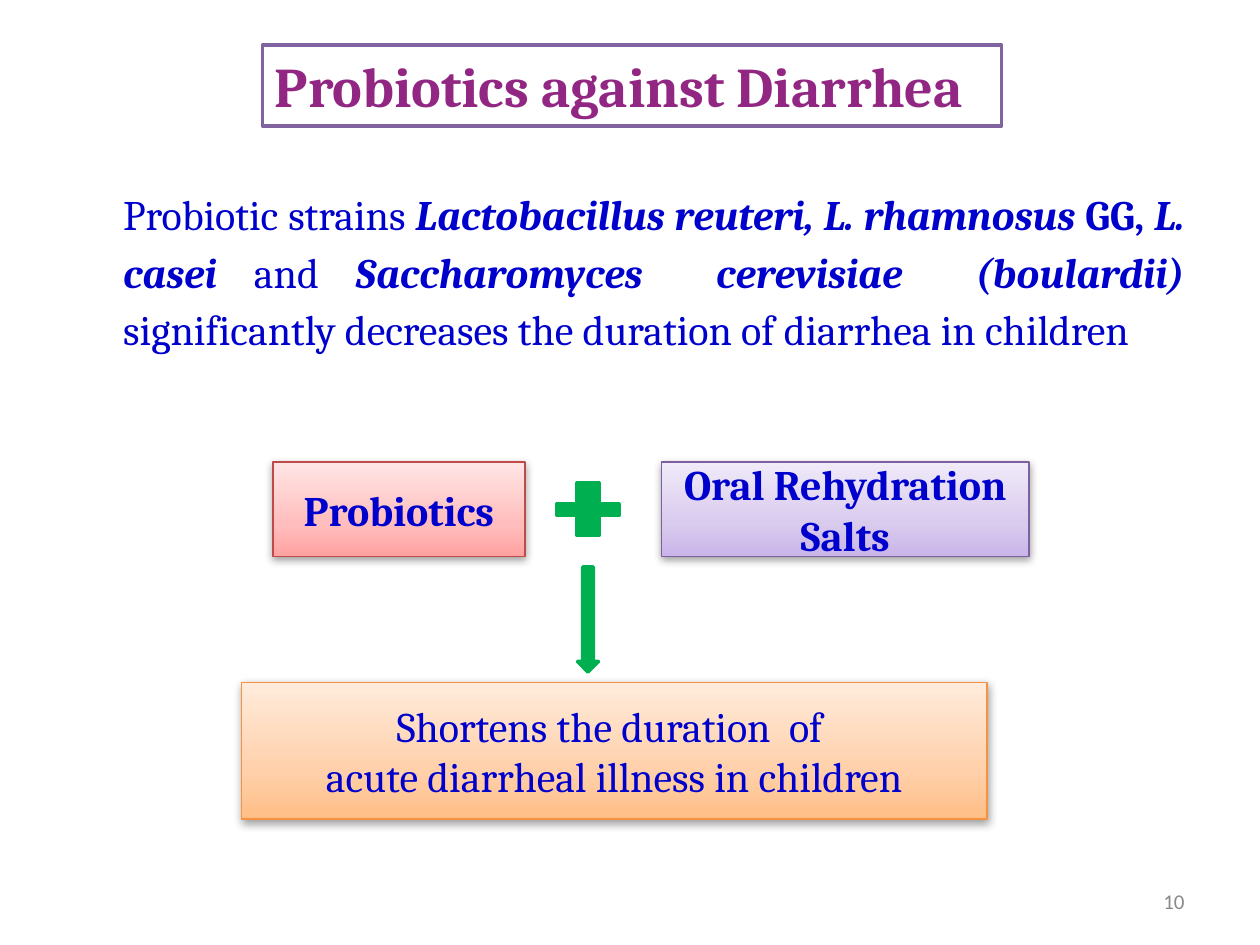
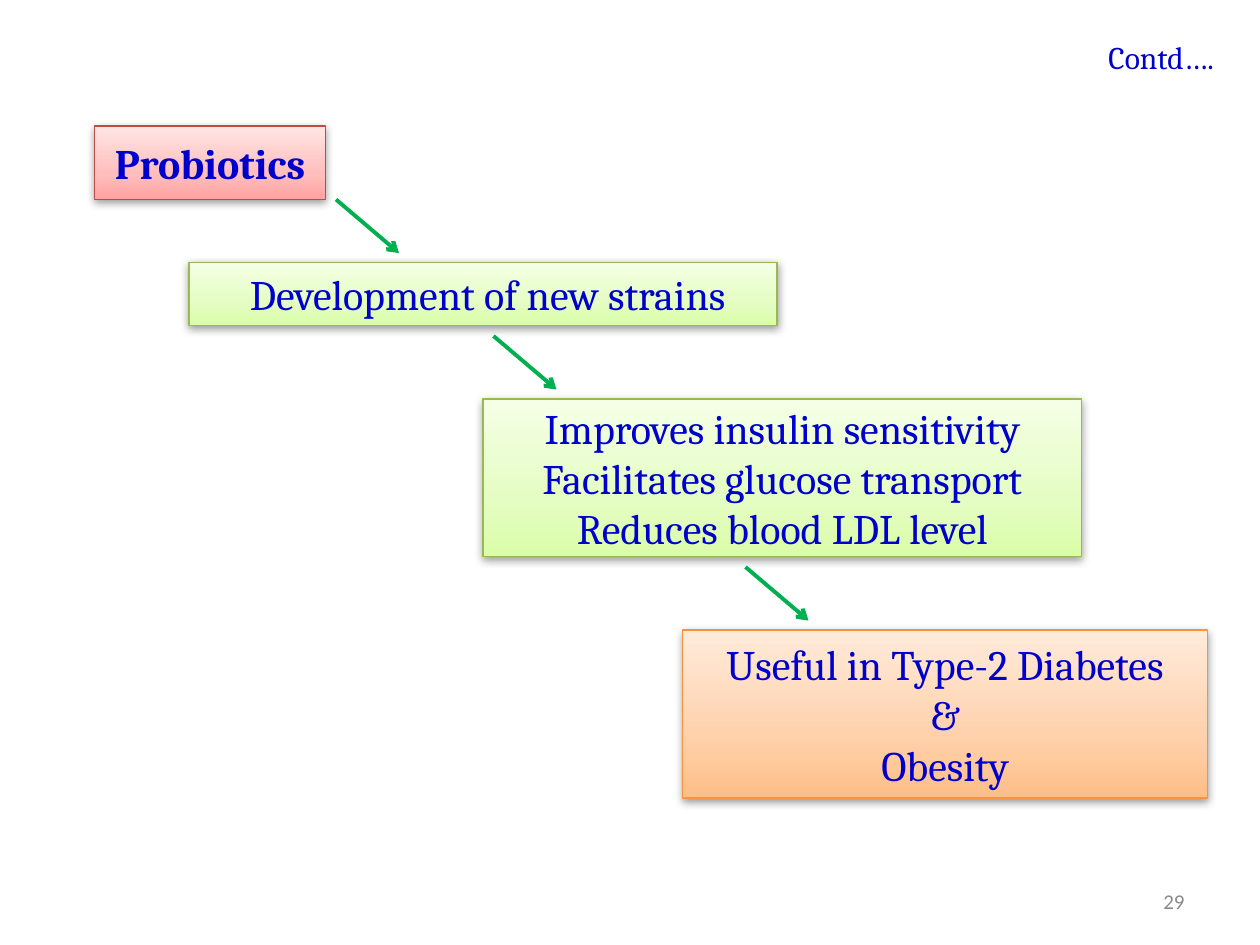
from lxml.etree import SubElement
from pptx import Presentation
from pptx.dml.color import RGBColor
from pptx.enum.shapes import MSO_CONNECTOR as CONN, MSO_SHAPE as SHAPE
from pptx.enum.text import MSO_ANCHOR as ANCHOR, PP_ALIGN as ALIGN
from pptx.oxml.ns import qn
from pptx.util import Inches, Pt

COLS, ROWS = 120, 90
WIDTH, HEIGHT = Inches(10), Inches(7.5)
GREEN, WHITE = "00B050", "FFFFFF"
BODY = {"name": "Cambria", "size": Pt(24), "color": "0000CC"}
BOLD = {**BODY, "bold": True}
STRAIN = {**BOLD, "italic": True}
TITLE = {**BOLD, "size": Pt(32), "color": "922683"}
NOTE = {**BODY, "size": Pt(18)}
NUMBER = {"name": "Calibri", "size": Pt(12), "color": "898989"}
THEMES = {
    "red": ("BE4B48", "FFA2A1", "FFBEBD", "FFE5E5"),
    "purple": ("7D60A0", "C9B5E8", "D9CBEE", "F0EAF9"),
    "green": ("98B954", "DAFDA7", "E4FDC2", "F5FFE6"),
    "orange": ("F69240", "FFBE86", "FFD0AA", "FFEBDB"),
}
STOPS = (0, 35000, 100000)


def rgb(value):
    """Turn a hex string into a colour."""
    return RGBColor.from_string(value)


def grid(*cells):
    """Turn alternating columns and rows into lengths."""
    units = (WIDTH / COLS, HEIGHT / ROWS)
    return [round(c * units[i % 2]) for i, c in enumerate(cells)]


def set_line(line, color, width):
    """Set the colour and width of an outline."""
    line.color.rgb = rgb(color)
    line.width = Pt(width)


def write(tf, paragraphs, style, align=ALIGN.CENTER, anchor=ANCHOR.MIDDLE, wrap=True):
    """Fill a text frame; a paragraph is a string or a list of styled runs."""
    tf.word_wrap, tf.vertical_anchor = wrap, anchor
    for i, content in enumerate(paragraphs):
        p = tf.add_paragraph() if i else tf.paragraphs[0]
        p.alignment = align
        runs = [(content, style)] if isinstance(content, str) else content
        for text, fmt in runs:
            r = p.add_run()
            r.text = text
            for key, value in fmt.items():
                if key == "color":
                    r.font.color.rgb = rgb(value)
                else:
                    setattr(r.font, key, value)


def add_text(slide, at, paragraphs, style, **layout):
    """Add a text box."""
    tf = slide.shapes.add_textbox(*grid(*at)).text_frame
    write(tf, paragraphs, style, **layout)
    return tf


def add_solid(slide, kind, at, fill, line):
    """Add a flat shape with a 2 pt outline."""
    sp = slide.shapes.add_shape(kind, *grid(*at))
    sp.shadow.inherit = False
    sp.fill.solid()
    sp.fill.fore_color.rgb = rgb(fill)
    set_line(sp.line, line, 2)
    return sp


def add_color(parent, value):
    """Append a hex colour element."""
    return SubElement(parent, qn("a:srgbClr"), val=value)


def add_box(slide, at, theme, paragraphs, style=BODY):
    """Add a gradient box with a soft shadow and centred text."""
    line, *colors = THEMES[theme]
    sp = slide.shapes.add_shape(SHAPE.RECTANGLE, *grid(*at))
    sp.fill.gradient()
    sp.fill.gradient_angle = 90
    props = sp.element.spPr
    stops = props.find(".//" + qn("a:gsLst"))
    stops.clear()
    for pos, color in zip(STOPS, colors):
        add_color(SubElement(stops, qn("a:gs"), pos=str(pos)), color)
    set_line(sp.line, line, 0.75)
    sp.shadow.inherit = False
    shadow = SubElement(props.find(qn("a:effectLst")), qn("a:outerShdw"),
                        blurRad=str(Pt(5)), dist=str(Pt(1.6)), dir="5400000", rotWithShape="0")
    SubElement(add_color(shadow, "000000"), qn("a:alpha"), val="38000")
    write(sp.text_frame, paragraphs, style)


def add_arrow(slide, col, row):
    """Add a step arrow that runs down to the right."""
    sp = slide.shapes.add_connector(CONN.STRAIGHT, *grid(col, row, col + 6, row + 5.1))
    set_line(sp.line, GREEN, 2.25)
    SubElement(sp.line._get_or_add_ln(), qn("a:tailEnd"), type="arrow")
    SubElement(sp.element.spPr, qn("a:effectLst"))


def new_slide(prs, number):
    """Add a blank slide with its page number."""
    slide = prs.slides.add_slide(prs.slide_layouts[6])
    add_text(slide, (86, 83.4, 28, 4.8), [number], NUMBER, align=ALIGN.RIGHT)
    return slide


def build_diarrhea(prs):
    """Build the slide on probiotics against diarrhea."""
    slide = new_slide(prs, "10")
    tf = add_text(slide, (6, 16.7, 108, 23.3), [[
        ("Probiotic strains ", BODY),
        ("Lactobacillus reuteri, L. rhamnosus", STRAIN),
        (" GG, ", BOLD),
        ("L. casei ", STRAIN),
        ("and", BODY),
        (" Saccharomyces  cerevisiae  (boulardii)", STRAIN),
        (" significantly decreases the duration of diarrhea in children", BODY),
    ]], BODY, align=ALIGN.JUSTIFY, anchor=ANCHOR.TOP)
    p = tf.paragraphs[0]
    p.line_spacing = 1.14
    p._p.get_or_add_pPr().set("marL", str(Inches(0.38)))

    title = add_solid(slide, SHAPE.RECTANGLE, (25, 4.3, 70.4, 7.7), WHITE, "8064A2")
    write(title.text_frame, ["Probiotics against Diarrhea"], TITLE,
          align=ALIGN.LEFT, anchor=ANCHOR.TOP, wrap=False)
    add_box(slide, (26, 44, 24, 9), "red", ["Probiotics"], BOLD)
    plus = add_solid(slide, SHAPE.CROSS, (53, 46, 6, 5), GREEN, GREEN)
    plus.adjustments[0] = 0.39
    add_box(slide, (63, 44, 35, 9), "purple", ["Oral Rehydration Salts"], BOLD)
    add_solid(slide, SHAPE.DOWN_ARROW, (55, 54, 2, 10), GREEN, GREEN)
    add_box(slide, (23, 65, 71, 13), "orange",
            ["Shortens the duration  of ", "acute diarrheal illness in children"])


def build_diabetes(prs):
    """Build the staircase from probiotics to their use in diabetes."""
    slide = new_slide(prs, "29")
    add_text(slide, (99, 3, 17.8, 4.8), ["Contd…."], NOTE, align=ALIGN.RIGHT, anchor=ANCHOR.TOP)
    add_box(slide, (9, 12, 22, 7), "red", ["Probiotics"], BOLD)
    add_box(slide, (18, 25, 56, 6), "green", [" Development of new strains"])
    add_box(slide, (46, 38, 57, 15), "green",
            ["Improves insulin sensitivity", "Facilitates glucose transport",
             "Reduces blood LDL level"])
    add_box(slide, (65, 60, 50, 16), "orange", ["Useful in Type-2 Diabetes", "&", "Obesity"])
    for col, row in ((32, 19), (47, 32), (71, 54)):
        add_arrow(slide, col, row)


def main():
    """Build and save the presentation."""
    prs = Presentation()
    prs.slide_width, prs.slide_height = WIDTH, HEIGHT
    build_diarrhea(prs)
    build_diabetes(prs)
    prs.save("out.pptx")


main()
